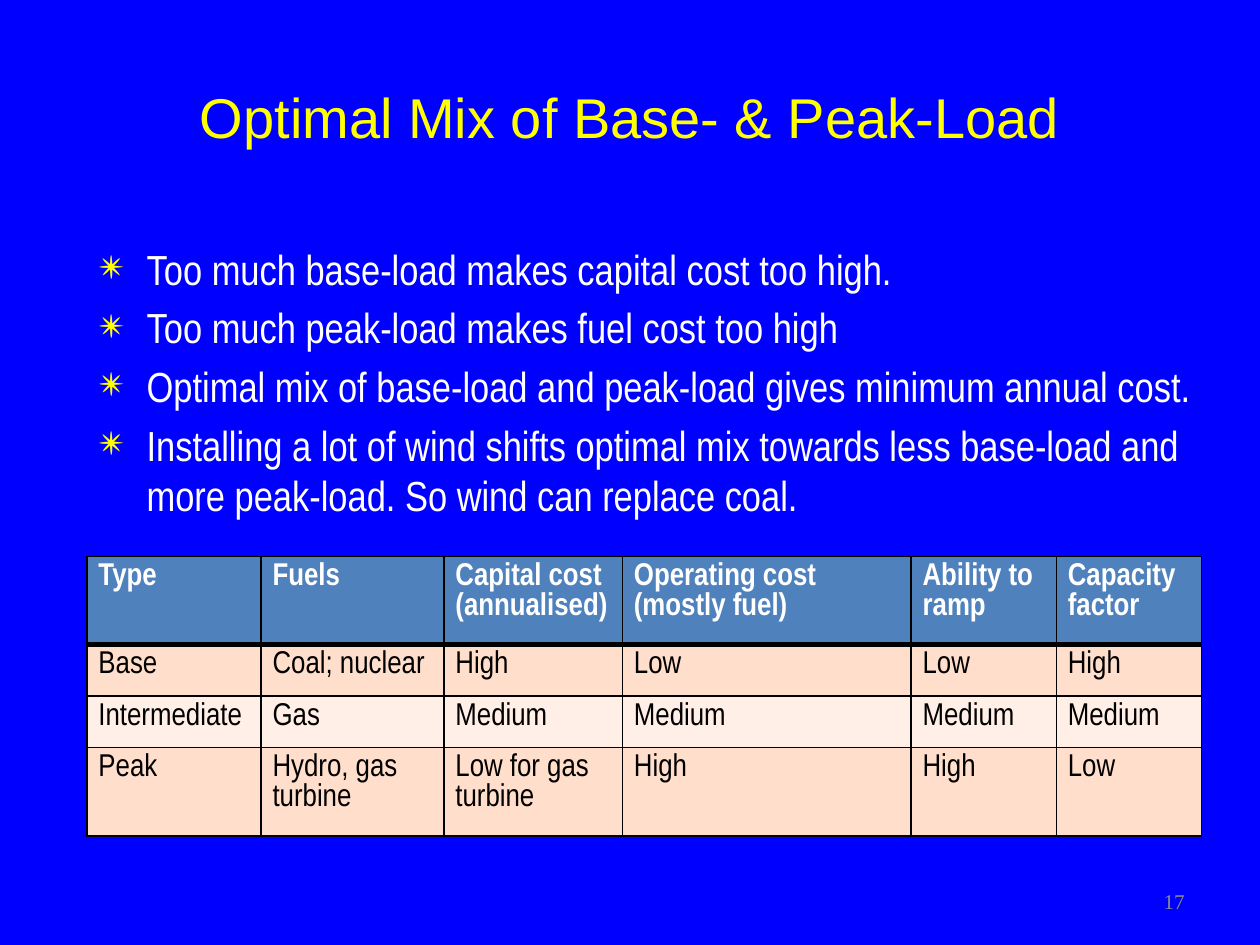
from lxml.etree import SubElement
from pptx import Presentation
from pptx.dml.color import RGBColor
from pptx.enum.text import MSO_ANCHOR as Anchor, PP_ALIGN as Align
from pptx.oxml.ns import qn
from pptx.util import Pt

BLUE = RGBColor(0x00, 0x00, 0xFF)
YELLOW = RGBColor(0xFF, 0xFF, 0x00)
WHITE = RGBColor(0xFF, 0xFF, 0xFF)
BLACK = RGBColor(0x00, 0x00, 0x00)
GRAY = RGBColor(0x8C, 0x8C, 0x8C)
STEEL = RGBColor(0x4F, 0x81, 0xBD)
PEACH = RGBColor(0xFF, 0xDE, 0xCB)
PALE_PEACH = RGBColor(0xFF, 0xEF, 0xE7)

POINTS = [
    "Too much base-load makes capital cost too high.",
    "Too much peak-load makes fuel cost too high",
    "Optimal mix of base-load and peak-load gives minimum annual cost.",
    "Installing a lot of wind shifts optimal mix towards less base-load and "
    "more peak-load. So wind can replace coal.",
]
PLANTS = [
    ["Type", "Fuels", "Capital cost\n(annualised)", "Operating cost\n(mostly fuel)",
     "Ability to ramp", "Capacity factor"],
    ["Base", "Coal; nuclear", "High", "Low", "Low", "High"],
    ["Intermediate", "Gas", "Medium", "Medium", "Medium", "Medium"],
    ["Peak", "Hydro, gas turbine", "Low for gas turbine", "High", "High", "Low"],
]
COLUMN_WIDTHS = [99.5, 104.5, 102, 165, 83, 83]
ROW_HEIGHTS = [50.4, 29.4, 29.4, 29.4]


def add_run(paragraph, text, size, font, color, bold=False):
    """Append one formatted run to a paragraph."""
    run = paragraph.add_run()
    run.text = text
    run.font.size = Pt(size)
    run.font.name = font
    run.font.color.rgb = color
    run.font.bold = bold


def add_frame(slide, box, anchor):
    """Add a wrapping text box and return its text frame."""
    frame = slide.shapes.add_textbox(*map(Pt, box)).text_frame
    frame.word_wrap = True
    frame.vertical_anchor = anchor
    return frame


def add_line(slide, box, text, size, font, color, align):
    """Place a single vertically centred line of text."""
    paragraph = add_frame(slide, box, Anchor.MIDDLE).paragraphs[0]
    paragraph.alignment = align
    add_run(paragraph, text, size, font, color)


def add_bullet(paragraph):
    """Give a paragraph a hanging yellow star bullet."""
    props = paragraph._p.get_or_add_pPr()
    props.set("marL", str(Pt(27)))
    props.set("indent", str(-Pt(27)))
    bullet_color = SubElement(props, qn("a:buClr"))
    SubElement(bullet_color, qn("a:srgbClr"), val=str(YELLOW))
    SubElement(props, qn("a:buChar"), char="✴")


def add_points(slide, box):
    """Place the bulleted statements."""
    frame = add_frame(slide, box, Anchor.TOP)
    for index, point in enumerate(POINTS):
        paragraph = frame.add_paragraph() if index else frame.paragraphs[0]
        paragraph.space_before = Pt(4.8)
        add_bullet(paragraph)
        add_run(paragraph, point, 24, "Arial Narrow", WHITE)


def set_borders(cell, widths):
    """Draw black borders of the given left, right, top and bottom widths."""
    props = cell._tc.get_or_add_tcPr()
    for index, (side, width) in enumerate(zip(("lnL", "lnR", "lnT", "lnB"), widths)):
        line = props.makeelement(qn(f"a:{side}"), {"w": str(Pt(width))})
        fill = SubElement(line, qn("a:solidFill"))
        SubElement(fill, qn("a:srgbClr"), val=str(BLACK))
        props.insert(index, line)


def fill_cell(cell, text, row):
    """Write and style one cell according to its row."""
    header = row == 0
    cell.margin_left = cell.margin_right = Pt(6.6)
    cell.fill.solid()
    cell.fill.fore_color.rgb = STEEL if header else PEACH if row % 2 else PALE_PEACH
    set_borders(cell, (1, 1, 3 if row == 1 else 1, 3 if header else 1))
    frame = cell.text_frame
    for index, line in enumerate(text.split("\n")):
        paragraph = frame.add_paragraph() if index else frame.paragraphs[0]
        add_run(paragraph, line, 18, "Arial Narrow", WHITE if header else BLACK, header)


def add_plants(slide, box):
    """Place the table comparing plant types."""
    table = slide.shapes.add_table(len(PLANTS), len(PLANTS[0]), *map(Pt, box)).table
    for column, width in zip(table.columns, COLUMN_WIDTHS):
        column.width = Pt(width)
    for row, height in zip(table.rows, ROW_HEIGHTS):
        row.height = Pt(height)
    for row, texts in enumerate(PLANTS):
        for column, text in enumerate(texts):
            fill_cell(table.cell(row, column), text, row)


def main():
    """Build and save the presentation."""
    deck = Presentation()
    deck.slide_width, deck.slide_height = Pt(720), Pt(540)
    slide = deck.slides.add_slide(deck.slide_layouts[6])
    slide.background.fill.solid()
    slide.background.fill.fore_color.rgb = BLUE
    add_line(slide, (36, 21.6, 648, 90), "Optimal Mix of Base- & Peak-Load",
             32, "Arial", YELLOW, Align.CENTER)
    add_points(slide, (49.7, 135.4, 649.4, 365.8))
    add_line(slide, (516, 500.5, 168, 28.8), "17", 12, "Times New Roman", GRAY, Align.RIGHT)
    add_plants(slide, (49.7, 318, sum(COLUMN_WIDTHS), sum(ROW_HEIGHTS)))
    deck.save("out.pptx")


if __name__ == "__main__":
    main()
